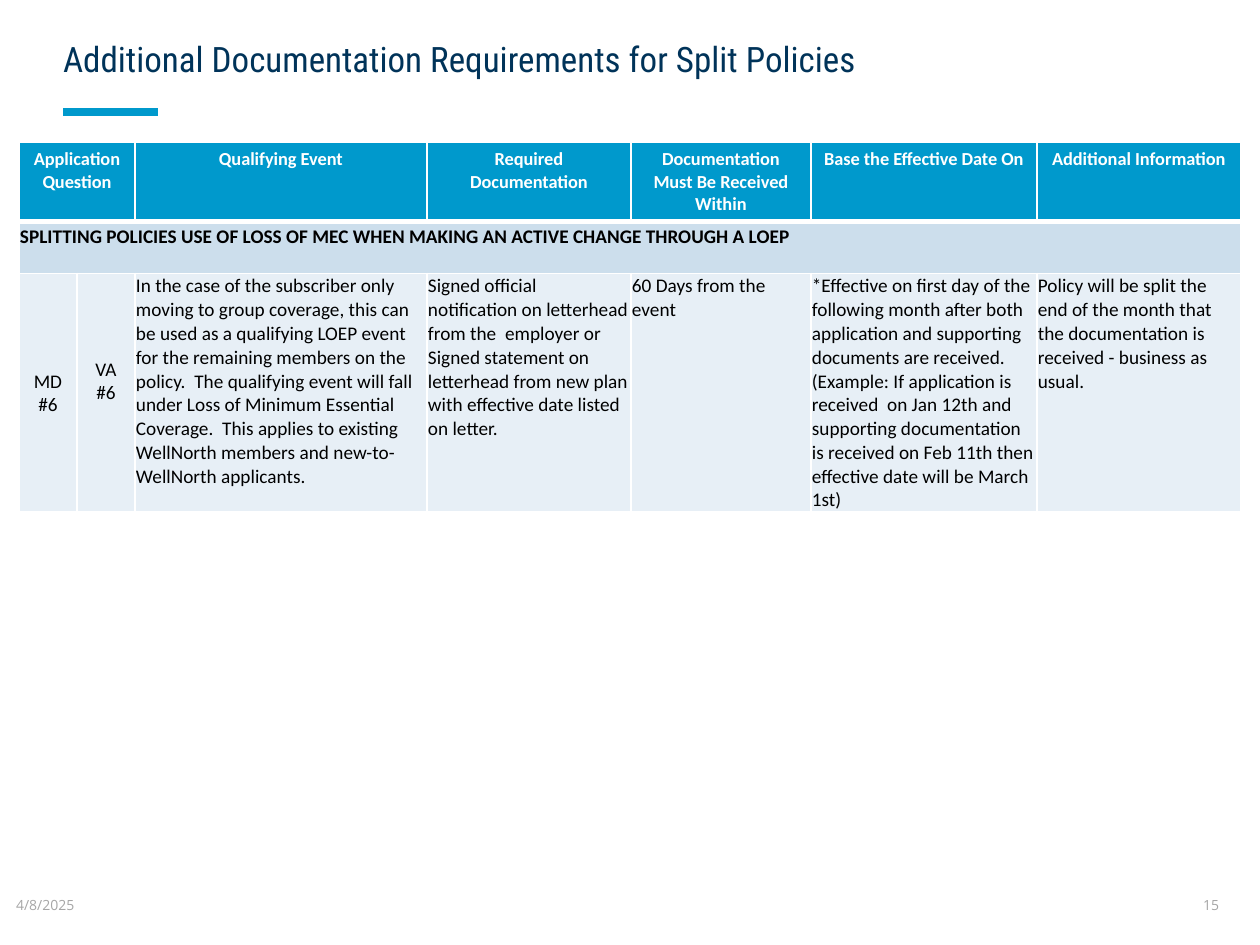
import pptx
import pptx.util
from lxml import etree
from pptx.dml.color import RGBColor
from pptx.enum.shapes import MSO_CONNECTOR
from pptx.enum.text import MSO_ANCHOR, MSO_AUTO_SIZE, PP_ALIGN
from pptx.oxml.ns import qn

# Content
TITLE = "Additional Documentation Requirements for Split Policies"
HEADINGS = [
    "Application Question", "", "Qualifying Event", "Required Documentation",
    "Documentation Must Be Received Within", "Base the Effective Date On",
    "Additional Information",
]
BANNER = ("SPLITTING POLICIES USE OF LOSS OF MEC WHEN MAKING AN ACTIVE CHANGE "
          "THROUGH A LOEP")
DETAILS = [
    "MD\v#6",
    "VA\v#6",
    "In the case of the subscriber only moving to group coverage, this can be "
    "used as a qualifying LOEP event for the remaining members on the policy.  "
    "The qualifying event will fall under Loss of Minimum Essential Coverage.  "
    "This applies to existing WellNorth members and new-to-WellNorth applicants.",
    "Signed official notification on letterhead from the  employer or Signed "
    "statement on letterhead from new plan with effective date listed on letter.",
    "60 Days from the event",
    "*Effective on first day of the following month after both application and "
    "supporting documents are received.  (Example: If application is received  "
    "on Jan 12th and supporting documentation is received on Feb 11th then "
    "effective date will be March 1st)",
    "Policy will be split the end of the month that the documentation is "
    "received - business as usual.",
]
FOOTERS = [("4/8/2025", 16, 92), ("15", 1203, 34)]  # text, left, width

# Style
COLORS = {"title": "003359", "accent": "0099CC", "banner": "CCDEEC",
          "detail": "E7EFF6", "white": "FFFFFF", "black": "000000",
          "footer": "A6A6A6"}
COLUMN_WIDTHS = [58, 58, 292, 204, 180, 226, 204]
ROW_HEIGHTS = [79, 52, 238]
QUESTION_COLUMNS = 2


def px(length):
    return pptx.util.Emu(length * 914400 // 126)


def color(name):
    return RGBColor.from_string(COLORS[name])


def style(paragraph, font, size, color_name, bold=False, align=PP_ALIGN.LEFT):
    paragraph.alignment = align
    paragraph.font.name = font
    paragraph.font.size = pptx.util.Pt(size)
    paragraph.font.bold = bold
    paragraph.font.color.rgb = color(color_name)


def set_insets(target, left, top, right, bottom):
    target.margin_left, target.margin_top = px(left), px(top)
    target.margin_right, target.margin_bottom = px(right), px(bottom)


def set_borders(cell, bottom_width):
    properties = cell._tc.get_or_add_tcPr()
    widths = {"lnL": 1, "lnR": 1, "lnT": 1, "lnB": bottom_width}
    for position, (side, width) in enumerate(widths.items()):
        border = etree.Element(qn(f"a:{side}"), w=str(pptx.util.Pt(width)))
        fill = etree.SubElement(border, qn("a:solidFill"))
        etree.SubElement(fill, qn("a:srgbClr"), val=COLORS["white"])
        properties.insert(position, border)


def fill_cell(cell, text, fill, size, font_color, bold, align):
    cell.fill.solid()
    cell.fill.fore_color.rgb = color(fill)
    cell.text = text
    style(cell.text_frame.paragraphs[0], "Calibri", size, font_color, bold, align)


presentation = pptx.Presentation()
presentation.slide_width, presentation.slide_height = px(1260), px(945)
slide = presentation.slides.add_slide(presentation.slide_layouts[5])

# Title and accent rule
title = slide.shapes.title
title.left, title.top, title.width, title.height = px(63), px(0), px(850), px(110)
title.text = TITLE
title.text_frame.auto_size = MSO_AUTO_SIZE.NONE
title.text_frame.vertical_anchor = MSO_ANCHOR.MIDDLE
set_insets(title.text_frame, 0, 38, 0, 25)
heading = title.text_frame.paragraphs[0]
heading.line_spacing = 0.9
style(heading, "Roboto Condensed", 20, "title")

rule = slide.shapes.add_connector(
    MSO_CONNECTOR.STRAIGHT, px(63), px(112), px(158), px(112))
rule.line.color.rgb = color("accent")
rule.line.width = pptx.util.Pt(4.5)
etree.SubElement(rule._element.spPr, qn("a:effectLst"))

# Requirements table
requirements = slide.shapes.add_table(
    len(ROW_HEIGHTS), len(COLUMN_WIDTHS), px(19), px(142),
    px(sum(COLUMN_WIDTHS)), px(sum(ROW_HEIGHTS))).table
for column, width in zip(requirements.columns, COLUMN_WIDTHS):
    column.width = px(width)
for row, height in zip(requirements.rows, ROW_HEIGHTS):
    row.height = px(height)

last_column = len(COLUMN_WIDTHS) - 1
requirements.cell(0, 0).merge(requirements.cell(0, QUESTION_COLUMNS - 1))
requirements.cell(1, 0).merge(requirements.cell(1, last_column))

for index, (header, detail) in enumerate(zip(HEADINGS, DETAILS)):
    header_cell, banner_cell, detail_cell = (
        requirements.cell(row, index) for row in range(3))
    fill_cell(header_cell, header, "accent", 10.5, "white", True, PP_ALIGN.CENTER)
    fill_cell(banner_cell, BANNER if index == 0 else "", "banner", 11, "black",
              True, PP_ALIGN.LEFT)
    is_question = index < QUESTION_COLUMNS
    fill_cell(detail_cell, detail, "detail", 11, "black", False,
              PP_ALIGN.CENTER if is_question else PP_ALIGN.LEFT)
    set_insets(banner_cell, 1, 4, 1, 0)
    set_insets(detail_cell, 1, 1, 1, 24 if index == 1 else 0)
    if is_question:
        detail_cell.vertical_anchor = MSO_ANCHOR.MIDDLE
    set_borders(header_cell, 3)
    set_borders(banner_cell, 1)
    set_borders(detail_cell, 1)

# Date and page number
for text, left, width in FOOTERS:
    frame = slide.shapes.add_textbox(px(left), px(880), px(width), px(50)).text_frame
    frame.word_wrap = True
    frame.vertical_anchor = MSO_ANCHOR.MIDDLE
    set_insets(frame, 0, 6, 0, 6)
    frame.text = text
    style(frame.paragraphs[0], "Open Sans", 8, "footer")

presentation.save("out.pptx")
